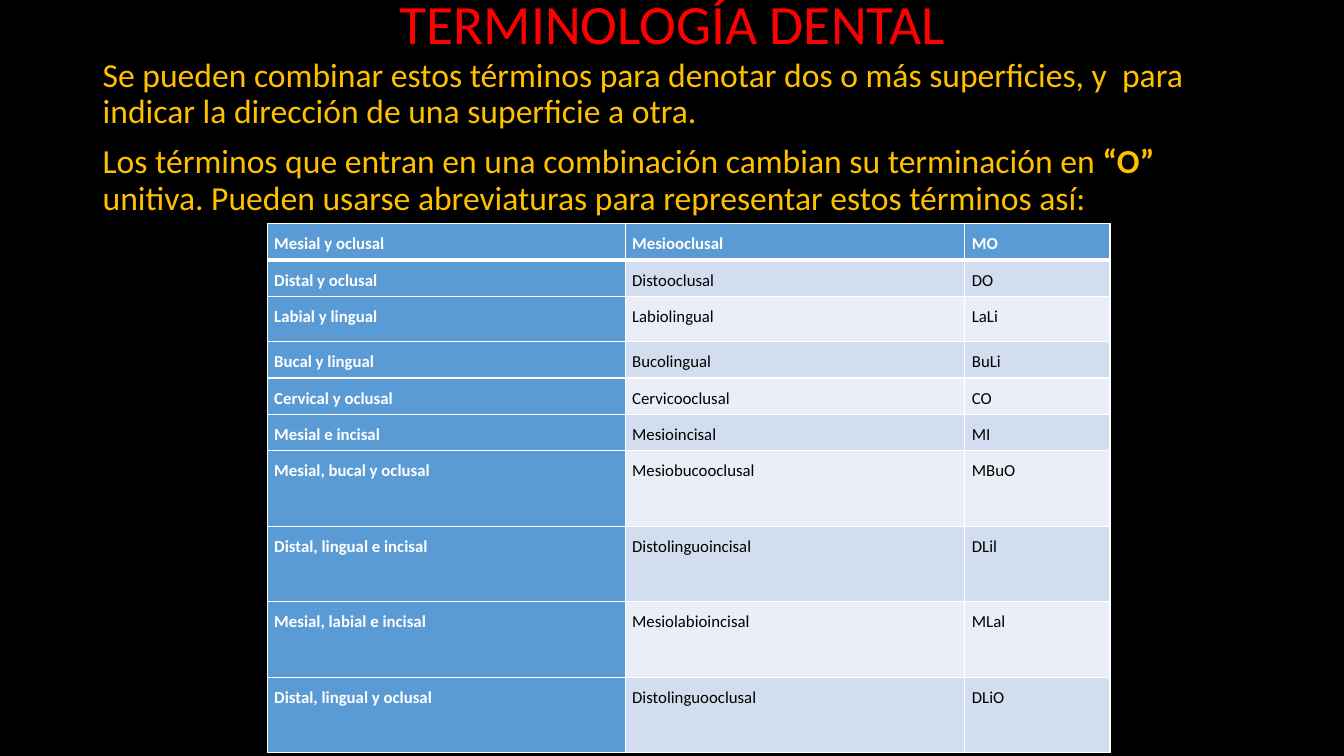
"""Build a slide on dental terminology with a table of combined terms."""
from dataclasses import dataclass
from typing import Any, NamedTuple

from lxml import etree
from pptx import Presentation
from pptx import util as u
from pptx.dml import color
from pptx.enum import text as t
from pptx.oxml import ns

SCALE = 9144


@dataclass(frozen=True)
class Theme:
    font: str = "Calibri"
    back: str = "000000"
    title: str = "FF0000"
    body: str = "FFC000"
    head: str = "5B9BD5"
    bands: tuple[str, str] = ("EAEFF7", "D2DEEF")
    light: str = "FFFFFF"
    dark: str = "000000"
    big: float = 39.6
    mid: float = 24
    small: float = 12
    thin: int = 1
    thick: int = 3


class Box(NamedTuple):
    left: int
    top: int
    width: int
    height: int


class Run(NamedTuple):
    text: str
    bold: bool = False


class Term(NamedTuple):
    parts: str
    name: str
    short: str
    height: int = 36


THEME = Theme()
PAGE = Box(0, 0, 1333, 750)
TITLE = Box(92, 0, 1150, 53)
BODY = Box(92, 53, 1150, 622)
GRID = Box(265, 222, 836, 525)
COLS = (355, 337, 144)
PARAS = (
    (Run("Se pueden combinar estos términos para denotar dos o más superficies, "
         "y  para indicar la dirección de una superficie a otra."),),
    (Run("Los términos que entran en una combinación cambian su terminación en "),
     Run("“O”", True),
     Run(" unitiva. Pueden usarse abreviaturas para representar estos "
         "términos así:")),
)
TERMS = (
    Term("Mesial y oclusal", "Mesiooclusal", "MO"),
    Term("Distal y oclusal", "Distooclusal", "DO"),
    Term("Labial y lingual", "Labiolingual", "LaLi", 45),
    Term("Bucal y lingual", "Bucolingual", "BuLi"),
    Term("Cervical y oclusal", "Cervicooclusal", "CO"),
    Term("Mesial e incisal", "Mesioincisal", "MI"),
    Term("Mesial, bucal y oclusal", "Mesiobucooclusal", "MBuO", 75),
    Term("Distal, lingual e incisal", "Distolinguoincisal", "DLil", 75),
    Term("Mesial, labial e incisal", "Mesiolabioincisal", "MLal", 75),
    Term("Distal, lingual y oclusal", "Distolinguooclusal", "DLiO", 75),
)


def px(size: int) -> int:
    return u.Emu(size * SCALE)


def apply(item: Any, form: dict[str, Any]) -> None:
    for key, value in form.items():
        setattr(item, key, value)


def place(shape: Any, box: Box) -> None:
    apply(shape, {key: px(size) for key, size in box._asdict().items()})


def paint(fill: Any, tone: str) -> None:
    fill.solid()
    fill.fore_color.rgb = color.RGBColor.from_string(tone)


def write(para: Any, run: Run, size: float, tone: str) -> None:
    part = para.add_run()
    part.text = run.text
    apply(part.font, {"name": THEME.font, "size": u.Pt(size), "bold": run.bold})
    part.font.color.rgb = color.RGBColor.from_string(tone)


def edge(cell: Any, side: str, width: int) -> None:
    line = etree.SubElement(cell._tc.get_or_add_tcPr(), ns.qn(f"a:ln{side}"),
                            w=str(u.Pt(width)))
    fill = etree.SubElement(line, ns.qn("a:solidFill"))
    etree.SubElement(fill, ns.qn("a:srgbClr"), val=THEME.light)


def add_title(slide: Any) -> None:
    shape = slide.shapes.title
    place(shape, TITLE)
    apply(shape.text_frame, {"vertical_anchor": t.MSO_ANCHOR.MIDDLE,
                             "auto_size": t.MSO_AUTO_SIZE.NONE,
                             "word_wrap": True})
    para = shape.text_frame.paragraphs[0]
    apply(para, {"alignment": t.PP_ALIGN.CENTER, "line_spacing": 0.9})
    write(para, Run("TERMINOLOGÍA DENTAL"), THEME.big, THEME.title)


def add_body(slide: Any) -> None:
    frame = slide.shapes.add_textbox(*map(px, BODY)).text_frame
    frame.word_wrap = True
    for row, runs in enumerate(PARAS):
        para = frame.add_paragraph() if row else frame.paragraphs[0]
        apply(para, {"line_spacing": 0.9, "space_before": u.Pt(10)})
        for run in runs:
            write(para, run, THEME.mid, THEME.body)


def fill_cell(cell: Any, label: str, row: int, col: int) -> None:
    head = row == 0 or col == 0
    apply(cell, {"margin_left": px(7), "margin_right": px(7),
                 "margin_top": 0, "margin_bottom": 0})
    sides = {"L": THEME.thin, "R": THEME.thin,
             "T": THEME.thick if row == 1 else THEME.thin,
             "B": THEME.thick if row == 0 else THEME.thin}
    for side, width in sides.items():
        edge(cell, side, width)
    paint(cell.fill, THEME.head if head else THEME.bands[row % 2])
    para = cell.text_frame.paragraphs[0]
    apply(para, {"alignment": t.PP_ALIGN.JUSTIFY, "line_spacing": 1.5})
    write(para, Run(label, head), THEME.small,
          THEME.light if head else THEME.dark)


def add_grid(slide: Any) -> None:
    table = slide.shapes.add_table(len(TERMS), len(COLS), *map(px, GRID)).table
    for col, width in enumerate(COLS):
        table.columns[col].width = px(width)
    for row, term in enumerate(TERMS):
        table.rows[row].height = px(term.height)
        for col, label in enumerate(term[:len(COLS)]):
            fill_cell(table.cell(row, col), label, row, col)


def main() -> None:
    deck = Presentation()
    apply(deck, {"slide_width": px(PAGE.width), "slide_height": px(PAGE.height)})
    slide = deck.slides.add_slide(deck.slide_layouts.get_by_name("Title Only"))
    paint(slide.background.fill, THEME.back)
    add_title(slide)
    add_body(slide)
    add_grid(slide)
    deck.save("out.pptx")


if __name__ == "__main__":
    main()
